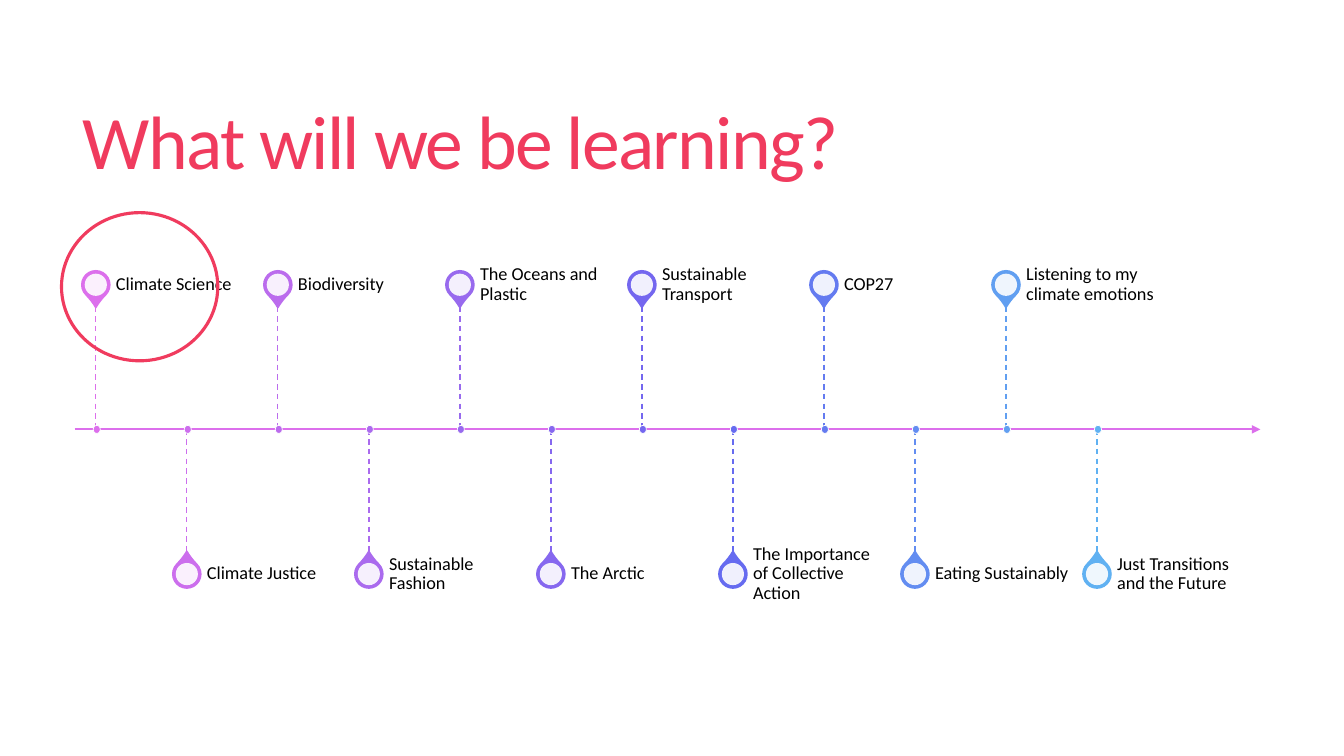
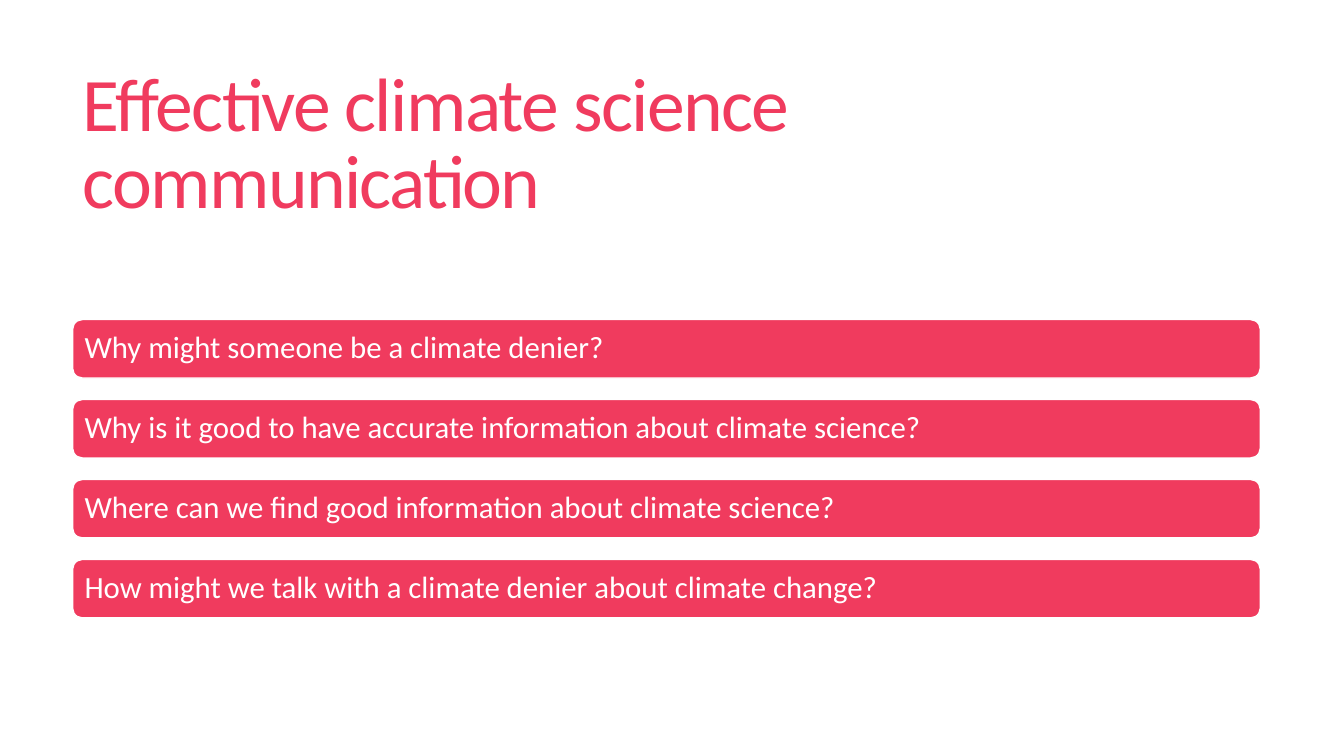
from lxml.etree import SubElement
from pptx import Presentation
from pptx.dml.color import RGBColor
from pptx.enum.dml import MSO_LINE
from pptx.enum.shapes import MSO_CONNECTOR, MSO_SHAPE
from pptx.enum.text import MSO_ANCHOR, MSO_AUTO_SIZE, PP_ALIGN
from pptx.oxml.ns import qn
from pptx.util import Inches, Pt

# Shared style
COLORS = {"accent": "F03B5E", "axis": "DC6FEC", "text": "000000", "white": "FFFFFF"}
FONT = "Calibri"
LEFT, WIDTH = 0.72, 11.78

# Timeline grid: one column per topic, odd topics above the axis, even below
TOPICS = {
    "Climate Science": "DC6FEC",
    "Climate Justice": "CC6EED",
    "Biodiversity": "BB6CED",
    "Sustainable Fashion": "AA6BEE",
    "The Oceans and Plastic": "986AEE",
    "The Arctic": "8668EF",
    "Sustainable Transport": "7467EF",
    "The Importance of Collective Action": "666BF0",
    "COP27": "647BF0",
    "Eating Sustainably": "638DF1",
    "Listening to my climate emotions": "619FF1",
    "Just Transitions and the Future": "60B1F2",
}
FIRST_X, LAST_X = 0.95, 10.88
COL = (LAST_X - FIRST_X) / (len(TOPICS) - 1)
AXIS_Y, STEM = 4.26, 1.22
PIN, PIN_HOLE, PIN_GAP = 0.28, 0.22, 0.22
LABEL_W, LABEL_H = 1.41, 0.43

# Question bars: equal rows
QUESTIONS = [
    "Why might someone be a climate denier?",
    "Why is it good to have accurate information about climate science?",
    "Where can we find good information about climate science?",
    "How might we talk with a climate denier about climate change?",
]
BAR_TOP, BAR_LAST, BAR_H = 3.17, 5.55, 0.58
BAR_ROW = (BAR_LAST - BAR_TOP) / (len(QUESTIONS) - 1)


def rgb(color):
    return RGBColor.from_string(color)


def write(shape, text, size, color, spacing, insets):
    tf = shape.text_frame
    tf.word_wrap = True
    tf.auto_size = MSO_AUTO_SIZE.NONE
    tf.vertical_anchor = MSO_ANCHOR.MIDDLE
    tf.margin_left, tf.margin_top, tf.margin_right, tf.margin_bottom = map(Inches, insets)
    p = tf.paragraphs[0]
    r = p.add_run()
    r.text = text
    p.alignment = PP_ALIGN.LEFT
    p.line_spacing = spacing
    p.font.name, p.font.size = FONT, Pt(size)
    p.font.color.rgb = rgb(color)
    return r


def add_titled_slide(prs, title):
    s = prs.slides.add_slide(prs.slide_layouts[5])
    sp = s.shapes.title
    sp.left, sp.top, sp.width, sp.height = map(Inches, (LEFT, 0.55, WIDTH, 1.81))
    r = write(sp, title, 54, COLORS["accent"], 0.85, (0.1, 0.05, 0.1, 0.05))
    r._r.get_or_add_rPr().set("spc", "-120")
    return s


def add_shape(s, kind, box, fill=None, line=None, weight=1):
    sp = s.shapes.add_shape(kind, *map(Inches, box))
    sp.shadow.inherit = False
    if fill:
        sp.fill.solid()
        sp.fill.fore_color.rgb = rgb(fill)
    else:
        sp.fill.background()
    if line:
        sp.line.color.rgb = rgb(line)
        sp.line.width = Pt(weight)
    else:
        sp.line.fill.background()
    return sp


def add_centred(s, kind, x, y, w, h, **style):
    return add_shape(s, kind, (x - w / 2, y - h / 2, w, h), **style)


def add_line(s, start, end, color, weight):
    c = s.shapes.add_connector(MSO_CONNECTOR.STRAIGHT, *map(Inches, start + end))
    c.line.color.rgb = rgb(color)
    c.line.width = Pt(weight)
    SubElement(c._element.spPr, qn("a:effectLst"))
    return c


def add_axis(s):
    c = add_line(s, (0.74, AXIS_Y), (LEFT + WIDTH, AXIS_Y), COLORS["axis"], 1.5)
    SubElement(c.line._get_or_add_ln(), qn("a:tailEnd"), type="triangle")


def add_topic(s, column, text, color):
    x = FIRST_X + column * COL
    above = column % 2 == 0
    side = -1 if above else 1
    stem_end = AXIS_Y + side * STEM
    pin_y = stem_end + side * LABEL_H / 2

    # Pin with a translucent centre
    pin = add_centred(s, MSO_SHAPE.TEAR, x, pin_y, PIN, PIN, fill=color, line=color)
    pin.adjustments[0] = 1.15
    pin.rotation = 135 if above else 315
    hole = add_centred(s, MSO_SHAPE.OVAL, x, pin_y, PIN_HOLE, PIN_HOLE, fill=COLORS["white"])
    SubElement(hole._element.spPr.find(".//" + qn("a:srgbClr")), qn("a:alpha"), val="90000")

    # Label
    box = (x + 0.2, pin_y - LABEL_H / 2, LABEL_W, LABEL_H)
    label = s.shapes.add_textbox(*map(Inches, box))
    write(label, text, 13, COLORS["text"], 0.9, (0, 0, 0.09, 0))

    # Stem and its dot on the axis
    top, bottom = sorted((AXIS_Y, stem_end))
    stem = add_line(s, (x, top), (x, bottom), color, 1)
    stem.line.dash_style = MSO_LINE.DASH
    add_centred(s, MSO_SHAPE.OVAL, x + 0.01, AXIS_Y, 0.07, 0.08,
                fill=color, line=COLORS["white"], weight=0.5)


def add_question(s, row, text):
    bar = add_shape(s, MSO_SHAPE.ROUNDED_RECTANGLE,
                    (LEFT, BAR_TOP + row * BAR_ROW, WIDTH, BAR_H),
                    fill=COLORS["accent"], line=COLORS["white"])
    write(bar, text, 22, COLORS["white"], 0.9, (0.09, 0.05, 0.09, 0.05))


def main():
    prs = Presentation()
    prs.slide_width, prs.slide_height = Inches(13.33), Inches(7.5)

    # Timeline of topics, the first one ringed
    s = add_titled_slide(prs, "What will we be learning?")
    add_axis(s)
    for column, (text, color) in enumerate(TOPICS.items()):
        add_topic(s, column, text, color)
    add_shape(s, MSO_SHAPE.OVAL, (0.61, 2.11, 1.55, 1.47), line=COLORS["accent"], weight=2.25)

    # Questions to discuss
    s = add_titled_slide(prs, "Effective climate science communication")
    for row, text in enumerate(QUESTIONS):
        add_question(s, row, text)

    prs.save("out.pptx")


if __name__ == "__main__":
    main()
